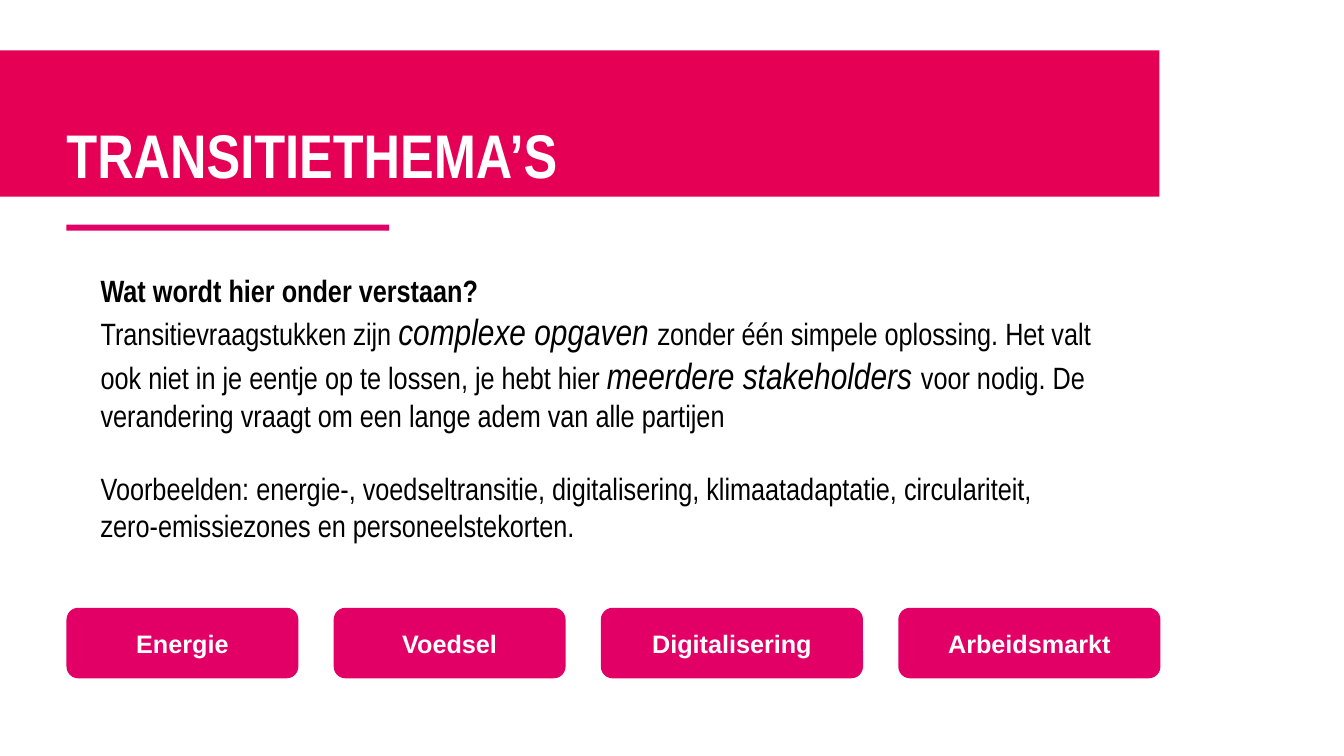
from pptx import Presentation
from pptx.dml.color import RGBColor
from pptx.enum.shapes import MSO_SHAPE
from pptx.enum.text import MSO_ANCHOR, PP_ALIGN
from pptx.util import Inches, Pt

RECT, ROUNDED = MSO_SHAPE.RECTANGLE, MSO_SHAPE.ROUNDED_RECTANGLE
BOTTOM, MIDDLE = MSO_ANCHOR.BOTTOM, MSO_ANCHOR.MIDDLE
LEFT, CENTER = PP_ALIGN.LEFT, PP_ALIGN.CENTER

# Content
TITLE = "TRANSITIETHEMA’S"
QUESTION = "Wat wordt hier onder verstaan?"
EXPLANATION = [  # (text, emphasised)
    ("Transitievraagstukken zijn ", False),
    ("complexe opgaven ", True),
    ("zonder één simpele oplossing. Het valt ook niet in je eentje op te lossen, "
     "je hebt hier ", False),
    ("meerdere stakeholders ", True),
    ("voor nodig. De verandering vraagt om een lange adem van alle partijen", False),
]
EXAMPLES = ("Voorbeelden: energie-, voedseltransitie, digitalisering, klimaatadaptatie, "
            "circulariteit, zero-emissiezones en personeelstekorten.")
THEMES = [("Energie", 2.3), ("Voedsel", 2.3),
          ("Digitalisering", 2.6), ("Arbeidsmarkt", 2.6)]  # (label, width)


class Theme:
    banner = RGBColor(0xE5, 0x00, 0x56)
    accent = RGBColor(0xE2, 0x00, 0x66)
    white = RGBColor(0xFF, 0xFF, 0xFF)
    black = RGBColor(0, 0, 0)
    narrow, sans = "Arial Narrow", "Arial"
    title, body, emphasis, label = Pt(44), Pt(22), Pt(26), Pt(18)


MARGIN = 0.66
BUTTON_TOP, BUTTON_HEIGHT, BUTTON_GAP = 6.03, 0.7, 0.35

prs = Presentation()
prs.slide_width, prs.slide_height = Inches(13.33), Inches(7.5)
slide = prs.slides.add_slide(prs.slide_layouts[6])


def add_block(kind, x, y, w, h, color):
    sp = slide.shapes.add_shape(kind, Inches(x), Inches(y), Inches(w), Inches(h))
    sp.shadow.inherit = False
    sp.fill.solid()
    sp.fill.fore_color.rgb = color
    sp.line.fill.background()
    return sp


def set_font(font, name, size, color, bold=False, italic=False):
    font.name, font.size = name, size
    font.bold, font.italic = bold, italic
    font.color.rgb = color


def set_label(sp, text, anchor, align, name, size):
    tf = sp.text_frame
    tf.word_wrap = True
    tf.vertical_anchor = anchor
    p = tf.paragraphs[0]
    p.text, p.alignment = text, align
    set_font(p.font, name, size, Theme.white, bold=True)
    return p


# Title banner and underline
banner = add_block(RECT, 0, 0.5, 11.5, 1.45, Theme.banner)
p = set_label(banner, TITLE, BOTTOM, LEFT, Theme.narrow, Theme.title)
p.line_spacing = 0.9
banner.text_frame.margin_left = Inches(MARGIN)
add_block(RECT, MARGIN, 2.23, 3.2, 0.06, Theme.accent)

# Explanation
box = slide.shapes.add_textbox(Inches(0.9), Inches(2.65), Inches(10.06), Inches(2.4))
tf = box.text_frame
tf.word_wrap = True
p = tf.paragraphs[0]
p.text = QUESTION
set_font(p.font, Theme.narrow, Theme.body, Theme.black, bold=True)

p = tf.add_paragraph()
for text, emphasised in EXPLANATION:
    r = p.add_run()
    r.text = text
    size = Theme.emphasis if emphasised else Theme.body
    set_font(r.font, Theme.narrow, size, Theme.black, italic=emphasised)

p = tf.add_paragraph()
p.text = EXAMPLES
p.space_before = Pt(26)
set_font(p.font, Theme.narrow, Theme.body, Theme.black)

# Theme buttons
x = MARGIN
for label, width in THEMES:
    button = add_block(ROUNDED, x, BUTTON_TOP, width, BUTTON_HEIGHT, Theme.accent)
    set_label(button, label, MIDDLE, CENTER, Theme.sans, Theme.label)
    x += width + BUTTON_GAP

prs.save("out.pptx")
